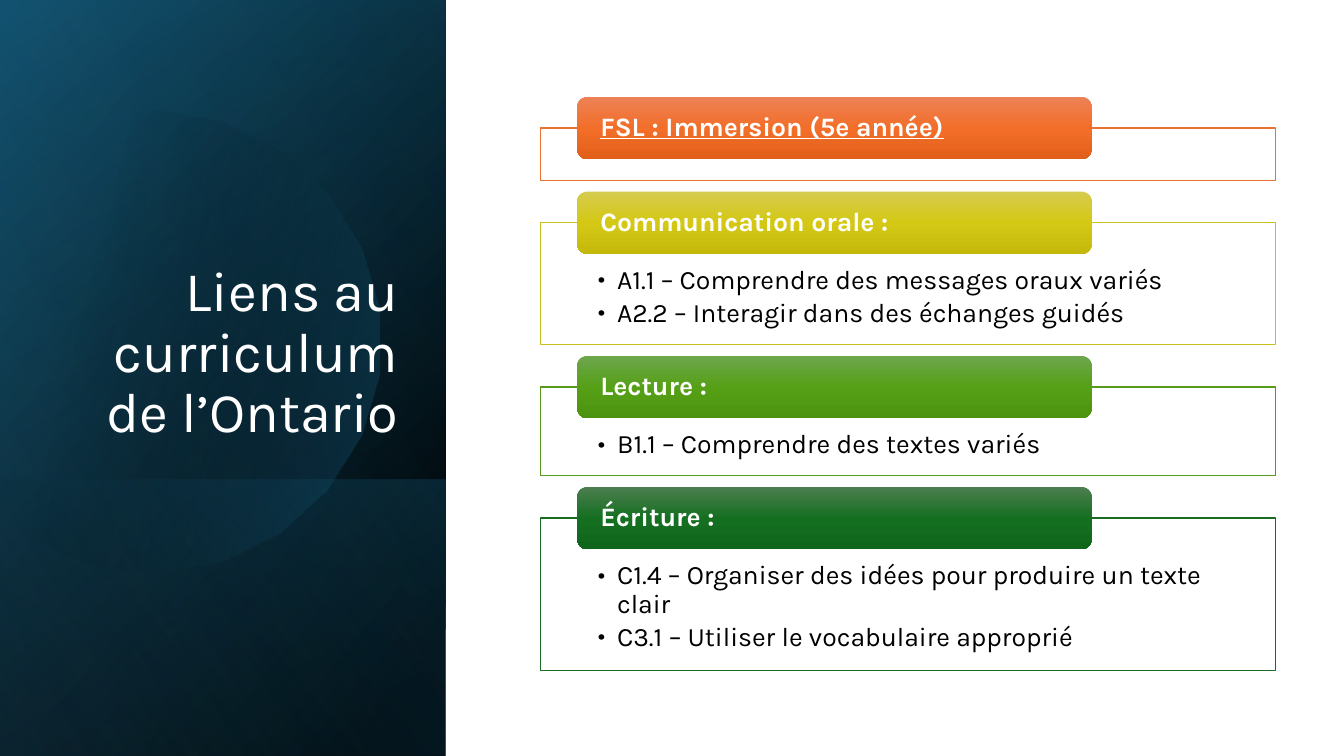
from math import cos, radians, sin

from lxml.etree import SubElement
from pptx import Presentation
from pptx.dml.color import RGBColor
from pptx.enum.shapes import MSO_SHAPE as Shape
from pptx.enum.text import MSO_ANCHOR as Anchor, PP_ALIGN as Align
from pptx.oxml.ns import qn
from pptx.util import Inches, Pt

FONT = "Karla"
SECTIONS = [
    # heading, underlined, frame height, line colour, gradient, bullets
    ("FSL : Immersion (5e année)", True, 0.52, "E97132",
     ("ED8257", "F26E29", "E25F1A"), []),
    ("Communication orale :", False, 1.21, "CBC11E",
     ("D5CB4E", "D4C815", "C4B90B"),
     ["A1.1 – Comprendre des messages oraux variés",
      "A2.2 – Interagir dans des échanges guidés"]),
    ("Lecture :", False, 0.88, "56991D",
     ("6DA64E", "56A017", "4C930F"),
     ["B1.1 – Comprendre des textes variés"]),
    ("Écriture :", False, 1.51, "196B24",
     ("4D7E50", "156F21", "0F661B"),
     ["C1.4 – Organiser des idées pour produire un texte clair",
      "C3.1 – Utiliser le vocabulaire approprié"]),
]


def color(value):
    return RGBColor.from_string(value)


def fill_gradient(shape, stops, angle):
    """Fill with (position %, colour, opacity %) stops, angle clockwise."""
    shape.fill.gradient()
    shape.fill.gradient_angle = 360 - angle
    stop_list = shape._element.spPr.find(".//" + qn("a:gsLst"))
    for old_stop in list(stop_list):
        stop_list.remove(old_stop)
    for position, value, opacity in stops:
        stop = SubElement(stop_list, qn("a:gs"), pos=str(position * 1000))
        tint = SubElement(stop, qn("a:srgbClr"), val=value)
        if opacity < 100:
            SubElement(tint, qn("a:alpha"), val=str(opacity * 1000))


def add_box(page, kind, left, top, width, height):
    box = page.shapes.add_shape(kind, Inches(left), Inches(top),
                                Inches(width), Inches(height))
    box.shadow.inherit = False
    box.line.fill.background()
    return box


def write(box, lines, size, value, bold=False, underline=False, bullet=False,
          align=Align.LEFT, anchor=Anchor.TOP, insets=(0.1, 0.05, 0.1, 0.05)):
    frame = box.text_frame
    frame.word_wrap = True
    frame.vertical_anchor = anchor
    (frame.margin_left, frame.margin_top,
     frame.margin_right, frame.margin_bottom) = map(Inches, insets)
    for index, line in enumerate(lines):
        para = frame.add_paragraph() if index else frame.paragraphs[0]
        if bullet:
            props = para._p.get_or_add_pPr()
            props.set("marL", str(Inches(0.19)))
            props.set("indent", str(-Inches(0.19)))
            SubElement(props, qn("a:buFont"), typeface=FONT)
            SubElement(props, qn("a:buChar"), char="•")
            para.level = 1
            para.space_after = Pt(3)
        para.alignment = align
        para.line_spacing = 0.9
        span = para.add_run()
        span.text = line
        span.font.name = FONT
        span.font.size = Pt(size)
        span.font.bold = bold
        span.font.underline = underline
        span.font.color.rgb = color(value)


def add_turned_panel(page, left, top, width, height, stops, angle):
    """Add a mirrored gradient panel, turned a quarter, that covers the box."""
    panel = add_box(page, Shape.RECTANGLE, left + (width - height) / 2,
                    top + (height - width) / 2, height, width)
    panel.rotation = 90
    panel._element.spPr.find(qn("a:xfrm")).set("flipH", "1")
    fill_gradient(panel, stops, angle)


def add_disc(page, center_x, center_y, radius):
    """Add a see-through disc with its left side cut off straight."""
    points = [(100 * (center_x + radius * cos(radians(turn))),
               100 * (center_y + radius * sin(radians(turn))))
              for turn in range(-136, 137, 16)]
    builder = page.shapes.build_freeform(*points[0], scale=Inches(0.01))
    builder.add_line_segments(points[1:], close=True)
    disc = builder.convert_to_shape()
    disc.shadow.inherit = False
    disc.line.fill.background()
    fill_gradient(disc, [(29, "000000", 0), (100, "156082", 43)], 14)


def add_title_panel(page, left, top, width, height):
    whole = (left, top, width, height)
    add_turned_panel(page, *whole,
                     [(8, "000000", 100), (100, "104862", 100)], 50)
    add_turned_panel(page, *whole,
                     [(0, "000000", 0), (99, "156082", 46)], 30)
    add_turned_panel(page, left, top + height - 2.74, width, 2.74,
                     [(2, "156082", 29), (100, "000000", 30)], 130)
    add_disc(page, left + 1.49, top + 3.39, 2.29)
    add_turned_panel(page, *whole,
                     [(0, "000000", 0), (99, "46B1E1", 11)], 120)
    title = page.shapes.add_textbox(Inches(left + 0.64), Inches(top + 1.84),
                                    Inches(3.41), Inches(2.62))
    write(title, ["Liens au curriculum de l’Ontario"], 40, "FFFFFF",
          align=Align.RIGHT, anchor=Anchor.BOTTOM)


def add_section(page, left, top, width, height, heading, underline,
                line_color, shades, bullets):
    """Add a framed list with its heading button across the top edge."""
    frame = add_box(page, Shape.RECTANGLE, left, top, width, height)
    frame.fill.solid()
    frame.fill.fore_color.rgb = color("FFFFFF")
    frame.line.color.rgb = color(line_color)
    frame.line.width = Pt(1)
    write(frame, bullets, 19, "000000", bullet=True,
          insets=(0.57, 0.43, 0.57, 0.15))

    button = add_box(page, Shape.ROUNDED_RECTANGLE, left + 0.05 * width,
                     top - 0.31, 0.7 * width, 0.62)
    fill_gradient(button, [(position, shade, 100) for position, shade
                           in zip((0, 50, 100), shades)], 90)
    write(button, [heading], 19, "FFFFFF", bold=True, underline=underline,
          anchor=Anchor.MIDDLE, insets=(0.2, 0, 0.2, 0))


def add_sections(page, left, top, width):
    for heading, underline, height, line_color, shades, bullets in SECTIONS:
        add_section(page, left, top, width, height, heading, underline,
                    line_color, shades, bullets)
        top += height + 0.42


def main():
    deck = Presentation()
    deck.slide_width, deck.slide_height = Inches(13.33), Inches(7.5)
    page = deck.slides.add_slide(deck.slide_layouts[6])
    add_title_panel(page, 0, 0, 4.42, 7.5)
    add_sections(page, 5.36, 1.27, 7.29)
    deck.save("out.pptx")


if __name__ == "__main__":
    main()
